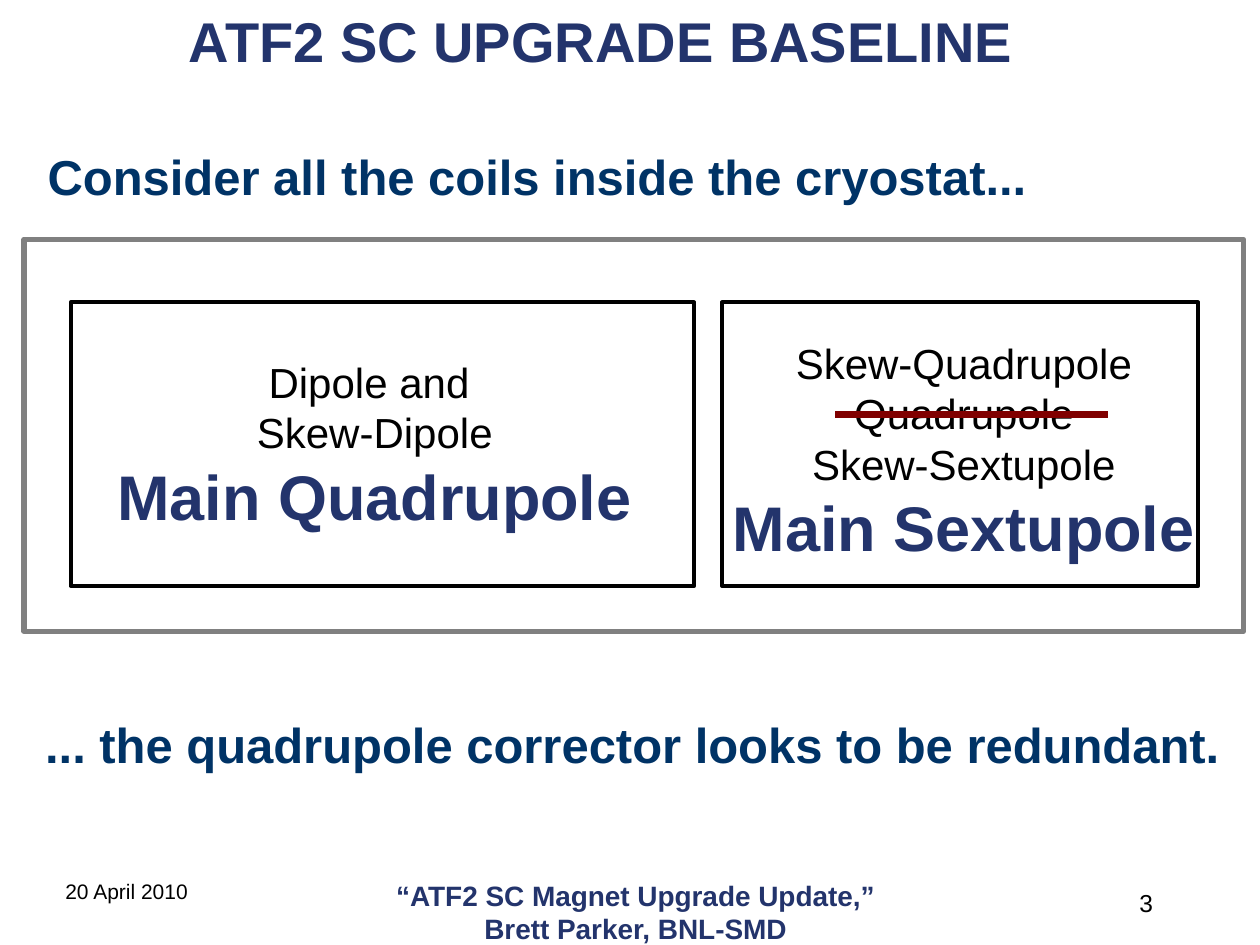
from lxml.etree import SubElement
from pptx import Presentation
from pptx.dml.color import RGBColor
from pptx.enum.shapes import MSO_CONNECTOR as Connector, MSO_SHAPE as Shape
from pptx.enum.text import MSO_ANCHOR as Anchor, PP_ALIGN as Align
from pptx.oxml.ns import qn
from pptx.util import Inches, Pt

WIDTH, HEIGHT = 10, 7.5
BLACK = RGBColor(0x00, 0x00, 0x00)
GRAY = RGBColor(0x80, 0x80, 0x80)
NAVY = RGBColor(0x23, 0x34, 0x6C)
TEAL = RGBColor(0x00, 0x33, 0x66)
MAROON = RGBColor(0x80, 0x00, 0x00)

# Font formats
TITLE = dict(size=Pt(32), bold=True, color=NAVY)
STATEMENT = dict(size=Pt(28), bold=True, color=TEAL)
COIL = dict(size=Pt(24), bold=False, color=BLACK)
MAIN_COIL = dict(size=Pt(36), bold=True, color=NAVY)
DATE = dict(size=Pt(12), bold=False, color=BLACK)
FOOTER = dict(size=Pt(16), bold=True, color=NAVY)
NUMBER = dict(size=Pt(14), bold=False, color=BLACK)

# Frames: left, top, width, height, line colour, line width
MAGNET_TOP, MAGNET_HEIGHT = 2.4, 2.25
FRAMES = [
    (0.56, MAGNET_TOP, 4.95, MAGNET_HEIGHT, BLACK, 2.25),
    (5.73, MAGNET_TOP, 3.78, MAGNET_HEIGHT, BLACK, 2.25),
    (0.19, 1.9, 9.68, 3.11, GRAY, 3),
]
STRIKE = (6.63, 8.79, 3.29)  # left end, right end, height on the slide

# Texts: box, alignment, wrapping, lines with their formats
TEXTS = [
    ((1.4, 0, 8.58, 0.75), Align.LEFT, True,
     [("ATF2 SC UPGRADE BASELINE", TITLE)]),
    ((0.28, 1.11, 9.44, 0.57), Align.LEFT, True,
     [("Consider all the coils inside the cryostat...", STATEMENT)]),
    ((0.26, 5.62, 9.58, 0.57), Align.LEFT, True,
     [("... the quadrupole corrector looks to be redundant.", STATEMENT)]),
    ((0.81, 2.78, 4.33, 1.51), Align.CENTER, False,
     [("Dipole and ", COIL), ("Skew-Dipole", COIL),
      ("Main Quadrupole", MAIN_COIL)]),
    ((5.7, 2.63, 3.9, 1.92), Align.CENTER, False,
     [("Skew-Quadrupole", COIL), ("Quadrupole", COIL),
      ("Skew-Sextupole", COIL), ("Main Sextupole", MAIN_COIL)]),
    ((0.42, 6.92, 2.25, 0.5), Align.LEFT, True, [("20 April 2010", DATE)]),
    ((2.76, 6.92, 4.57, 0.5), Align.CENTER, True,
     [("“ATF2 SC Magnet Upgrade Update,” Brett Parker, BNL-SMD", FOOTER)]),
    ((7.42, 7, 1.83, 0.5), Align.RIGHT, True, [("3", NUMBER)]),
]


def add_text(slide, box, alignment, wrap, lines):
    frame = slide.shapes.add_textbox(*map(Inches, box)).text_frame
    frame.word_wrap = wrap
    frame.vertical_anchor = Anchor.TOP
    for index, (text, style) in enumerate(lines):
        paragraph = frame.add_paragraph() if index else frame.paragraphs[0]
        paragraph.alignment = alignment
        run = paragraph.add_run()
        run.text = text
        run.font.name = "Arial"
        for name, value in style.items():
            if name == "color":
                run.font.color.rgb = value
            else:
                setattr(run.font, name, value)


def add_frame(slide, left, top, width, height, color, weight):
    shape = slide.shapes.add_shape(
        Shape.RECTANGLE, *map(Inches, (left, top, width, height)))
    shape.shadow.inherit = False
    shape.fill.background()
    shape.line.color.rgb = color
    shape.line.width = Pt(weight)


def add_strike(slide, left, right, y):
    line = slide.shapes.add_connector(
        Connector.STRAIGHT, *map(Inches, (left, y, right, y)))
    line.line.color.rgb = MAROON
    line.line.width = Pt(4.5)
    SubElement(line._element.spPr, qn("a:effectLst"))


def main():
    presentation = Presentation()
    presentation.slide_width = Inches(WIDTH)
    presentation.slide_height = Inches(HEIGHT)
    slide = presentation.slides.add_slide(presentation.slide_layouts[6])

    for text in TEXTS:
        add_text(slide, *text)
    for frame in FRAMES:
        add_frame(slide, *frame)
    add_strike(slide, *STRIKE)

    presentation.save("out.pptx")


if __name__ == "__main__":
    main()
